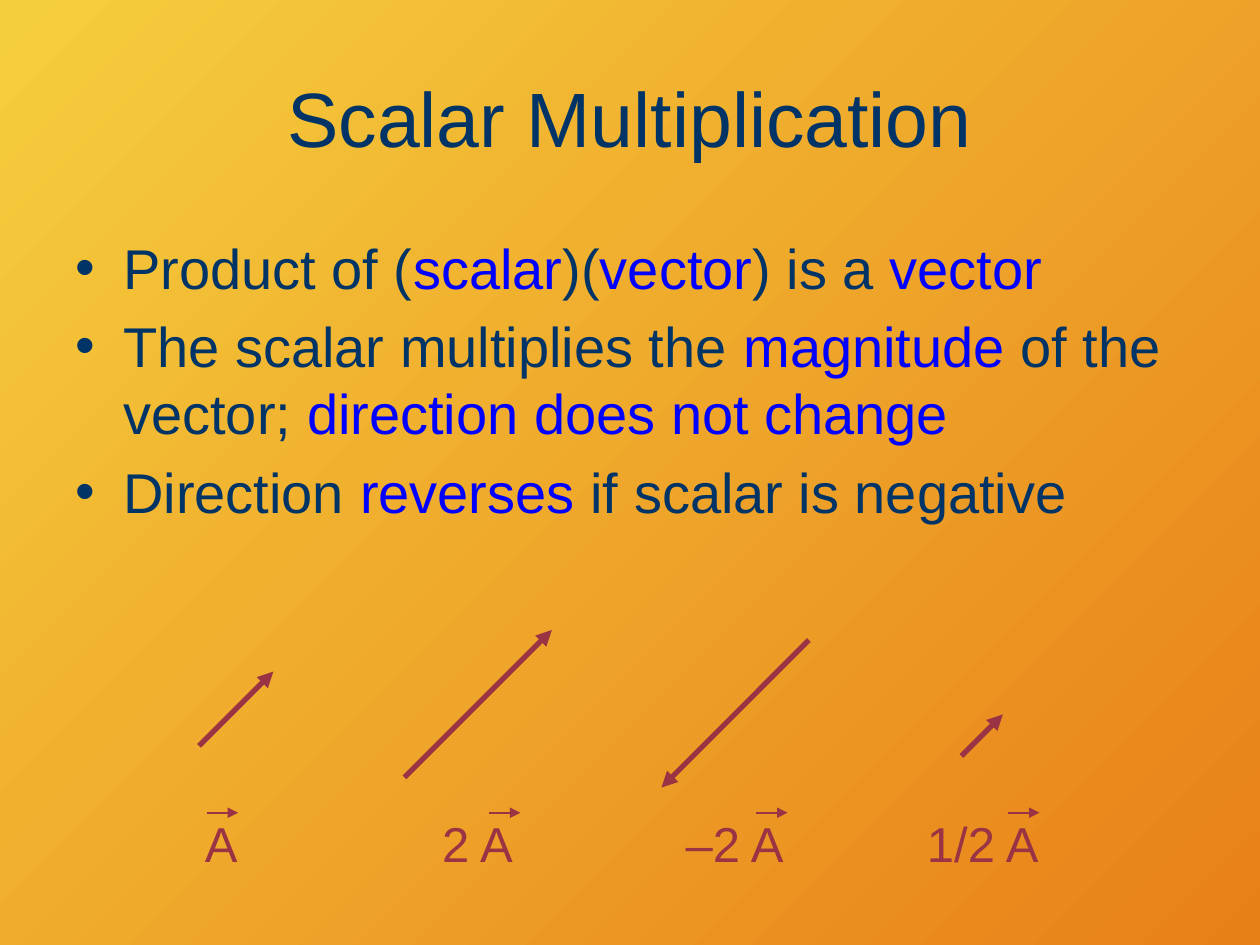
from lxml.etree import SubElement as Sub
from pptx import Presentation
from pptx.dml.color import RGBColor
from pptx.enum.shapes import MSO_CONNECTOR as Conn
from pptx.enum.text import MSO_ANCHOR as Anchor, PP_ALIGN as Align
from pptx.oxml.ns import qn
from pptx.util import Inches, Pt

NAVY = RGBColor(0x00, 0x33, 0x66)
BLUE = RGBColor(0x00, 0x00, 0xFF)
WINE = RGBColor(0x9A, 0x33, 0x44)
GOLD = RGBColor(0xF5, 0xCE, 0x3D)
RUST = RGBColor(0xE8, 0x80, 0x18)

POINTS = [
    "Product of (*scalar*)(*vector*) is a *vector",
    "The scalar multiplies the *magnitude* of the vector; *direction does not change",
    "Direction *reverses* if scalar is negative",
]

# label, label left, label width, bar left, arrow start x, start y, signed run
VECTORS = [
    ("A", 1.59, 0.33, 1.64, 1.58, 5.92, 0.59),
    ("2 A", 3.46, 0.66, 3.88, 3.21, 6.17, 1.17),
    ("1/2 A", 7.18, 1.24, 8, 7.63, 6, 0.33),
    ("–2 A", 5.41, 0.84, 6, 6.42, 5.08, -1.17),
]
BASE = 6.45


def write(para, text, size=32, color=NAVY, mark=BLUE, align=Align.LEFT, before=0):
    para.alignment = align
    para.space_before = Pt(before)
    for i, part in enumerate(text.split("*")):
        run = para.add_run()
        run.text = part
        run.font.name = "Arial"
        run.font.size = Pt(size)
        run.font.color.rgb = mark if i % 2 else color


class Deck:
    def __init__(self, prs):
        self.ink = WINE
        self.slide = prs.slides.add_slide(prs.slide_layouts[5])

    def back(self, first, last):
        fill = self.slide.background.fill
        fill.gradient()
        fill.gradient_angle = 315
        for stop, color, place in zip(fill.gradient_stops, (first, last), (0, 1)):
            stop.color.rgb = color
            stop.position = place

    def title(self, text, *area):
        head = self.slide.shapes.title
        head.left, head.top, head.width, head.height = map(Inches, area)
        head.text_frame.vertical_anchor = Anchor.MIDDLE
        write(head.text_frame.paragraphs[0], text, size=44, align=Align.CENTER)

    def list(self, items, *area):
        frame = self.slide.shapes.add_textbox(*map(Inches, area)).text_frame
        frame.word_wrap = True
        frame.margin_top = Inches(0.1)
        for i, item in enumerate(items):
            para = frame.add_paragraph() if i else frame.paragraphs[0]
            props = para._p.get_or_add_pPr()
            props.set("marL", str(Inches(0.38)))
            props.set("indent", str(-Inches(0.38)))
            Sub(Sub(props, qn("a:buClr")), qn("a:srgbClr"), val=str(NAVY))
            Sub(props, qn("a:buFont"), typeface="Arial")
            Sub(props, qn("a:buChar"), char="•")
            write(para, item, before=6.4 if i else 0)

    def label(self, group, text, *area):
        frame = group.shapes.add_textbox(*map(Inches, area)).text_frame
        frame.margin_left = frame.margin_right = 0
        frame.margin_top = frame.margin_bottom = 0
        frame.vertical_anchor = Anchor.BOTTOM
        write(frame.paragraphs[0], text, size=28, color=self.ink, align=Align.CENTER)

    def arrow(self, group, ends, width):
        line = group.shapes.add_connector(Conn.STRAIGHT, *map(Inches, ends))
        line.line.color.rgb = self.ink
        line.line.width = Pt(width)
        Sub(line.line._get_or_add_ln(), qn("a:tailEnd"), type="triangle")
        Sub(line._element.spPr, qn("a:effectLst"))

    def vector(self, text, left, width, bar, x, y, run):
        group = self.slide.shapes.add_group_shape()
        self.arrow(group, (x, y, x + run, y - run), 3)
        self.label(group, text, left, BASE, width, 0.47)
        self.arrow(group, (bar, BASE, bar + 0.25, BASE), 1)


def main():
    prs = Presentation()
    prs.slide_width, prs.slide_height = Inches(10), Inches(7.5)
    deck = Deck(prs)
    deck.back(GOLD, RUST)
    deck.title("Scalar Multiplication", 0.5, 0.3, 9, 1.25)
    deck.list(POINTS, 0.5, 1.75, 9, 3.25)
    for item in VECTORS:
        deck.vector(*item)
    prs.save("out.pptx")


if __name__ == "__main__":
    main()
